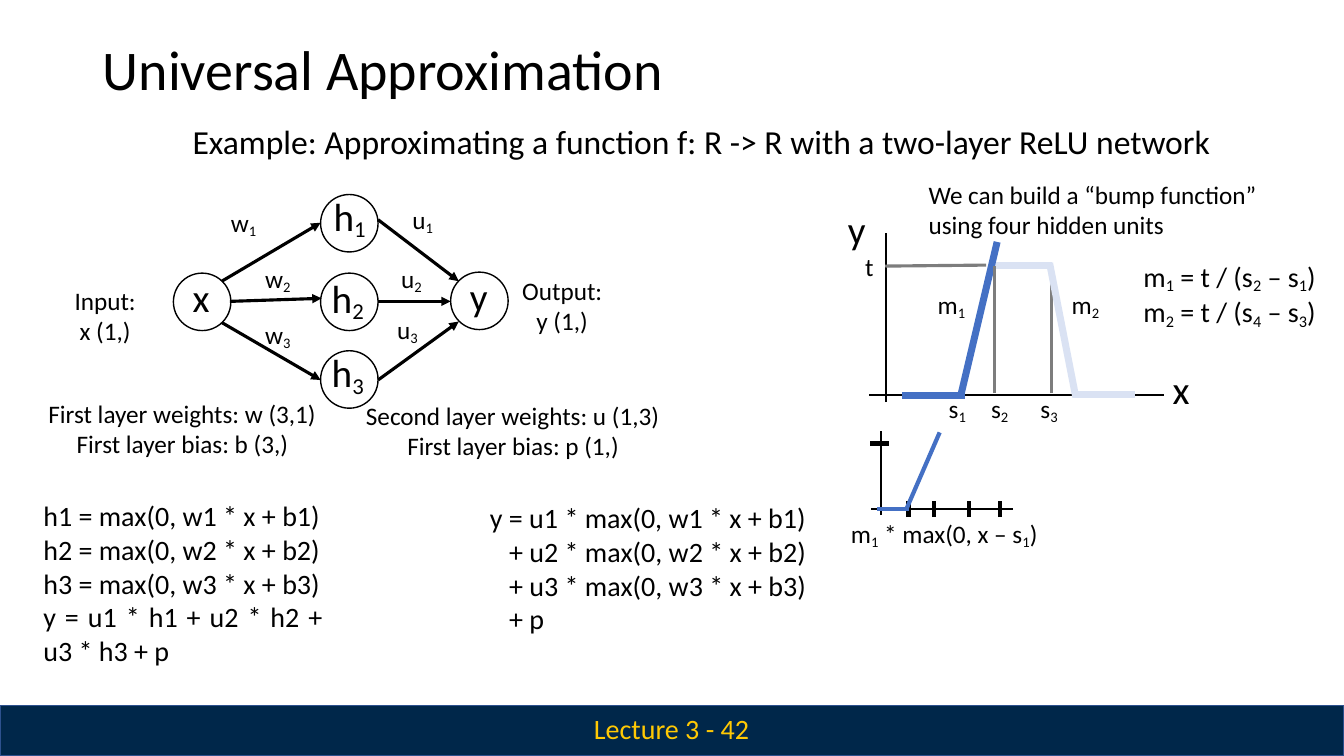
from dataclasses import dataclass

from lxml import etree
from pptx import Presentation
from pptx.dml.color import RGBColor
from pptx.enum import shapes, text
from pptx.oxml.ns import qn
from pptx.util import Inches, Pt

BLACK = RGBColor(0x00, 0x00, 0x00)
GREY = RGBColor(0x7D, 0x7D, 0x7D)
BLUE = RGBColor(0x44, 0x70, 0xC4)
PALE_BLUE = RGBColor(0xDA, 0xE2, 0xF3)
NAVY = RGBColor(0x00, 0x27, 0x4A)
NAVY_EDGE = RGBColor(0x2D, 0x51, 0x8E)
GOLD = RGBColor(0xFF, 0xC9, 0x04)

FONT = "Calibri"
NODE_SIZE = 0.57


@dataclass
class Region:
    """Part of the page; all positions are inches from its left top corner."""
    page: object
    left: float
    top: float

    def spot(self, across, down):
        return Inches(self.left + across), Inches(self.top + down)

    def label(self, across, down, width, lines, size=18, color=BLACK,
              hang=0, pitch=None, align=text.PP_ALIGN.LEFT):
        """Text box; "_" lowers the next character, hang indents later lines."""
        height = Inches(len(lines) * size * 1.22 / 72)
        box = self.page.shapes.add_textbox(*self.spot(across, down), Inches(width), height)
        frame = box.text_frame
        frame.word_wrap = True
        frame.margin_left = frame.margin_right = frame.margin_bottom = 0
        frame.margin_top = Inches(0.01)
        for index, line in enumerate(lines):
            para = frame.paragraphs[0] if index == 0 else frame.add_paragraph()
            para.alignment = align
            if pitch:
                para.line_spacing = Pt(pitch)
            if index == 0:
                para.space_before = Pt(1)
            elif hang:
                para._p.get_or_add_pPr().set("marL", str(Inches(hang)))
            plain, *lowered = line.split("_")
            add_span(para, plain, size, color)
            for piece in lowered:
                add_span(para, piece[0], size, color, "-16000")
                add_span(para, piece[1:], size, color)

    def line(self, start, end, color=BLACK, width=1.25, arrow=False):
        link = self.page.shapes.add_connector(
            shapes.MSO_CONNECTOR.STRAIGHT, *self.spot(*start), *self.spot(*end))
        link.line.color.rgb = color
        link.line.width = Pt(width)
        if arrow:
            etree.SubElement(link.line._get_or_add_ln(), qn("a:tailEnd"), type="triangle")
        etree.SubElement(link._element.spPr, qn("a:effectLst"))

    def node(self, across, down):
        circle = self.page.shapes.add_shape(
            shapes.MSO_SHAPE.OVAL, *self.spot(across, down),
            Inches(NODE_SIZE), Inches(NODE_SIZE))
        circle.shadow.inherit = False
        circle.fill.background()
        circle.line.color.rgb = BLACK
        circle.line.width = Pt(1)


def add_span(para, words, size, color, baseline=None):
    if not words:
        return
    span = para.add_run()
    span.text = words
    span.font.name = FONT
    span.font.size = Pt(size)
    span.font.color.rgb = color
    if baseline:
        span._r.get_or_add_rPr().set("baseline", baseline)


def add_footer(region):
    bar = region.page.shapes.add_shape(
        shapes.MSO_SHAPE.RECTANGLE, *region.spot(0, 0), Inches(13.33), Inches(0.5))
    bar.shadow.inherit = False
    bar.fill.solid()
    bar.fill.fore_color.rgb = NAVY
    bar.line.color.rgb = NAVY_EDGE
    bar.line.width = Pt(1)
    region.label(5.89, 0.05, 1.8, ["Lecture 3 - 42"], 20, GOLD)


def add_headings(region):
    region.label(0, 0, 11.8, ["Universal Approximation"], 40)
    region.label(0.89, 0.86, 10.5, [
        "Example: Approximating a function f: R -> R with a two-layer ReLU network"], 24)


def add_network(region):
    nodes = [("x", 0, 0.78, 0.19, -0.01), ("h_1", 1.46, 0, 0.13, -0.03),
             ("h_2", 1.46, 0.78, 0.11, 0), ("h_3", 1.46, 1.55, 0.11, -0.03),
             ("y", 2.75, 0.77, 0.19, -0.01)]
    for name, across, down, shift_across, shift_down in nodes:
        region.node(across, down)
        region.label(across + shift_across, down + shift_down, 0.5, [name], 28)

    arrows = [((0.48, 0.86), (1.46, 0.28)), ((0.56, 1.06), (1.47, 1.03)),
              ((0.48, 1.27), (1.46, 1.84)), ((2.03, 0.25), (2.83, 0.86)),
              ((2.03, 1.06), (2.75, 1.06)), ((2.03, 1.84), (2.83, 1.26))]
    for start, end in arrows:
        region.line(start, end, width=2.25, arrow=True)

    weights = [("w_1", 0.57, 0.12), ("w_2", 0.91, 0.67), ("w_3", 0.91, 1.23),
               ("u_1", 2.37, 0.09), ("u_2", 2.26, 0.67), ("u_3", 2.22, 1.18)]
    for name, across, down in weights:
        region.label(across, down, 0.4, [name])

    captions = [(-0.98, 0.9, 0.05, ["Input:", "x (1,)"]),
                (3.46, 0.8, 0.14, ["Output:", "y (1,)"]),
                (-1.24, 2.02, 0.28, ["First layer weights: w (3,1)", "First layer bias: b (3,)"]),
                (1.91, 2.04, 0.41, ["Second layer weights: u (1,3)", "First layer bias: p (1,)"])]
    for across, down, hang, lines in captions:
        region.label(across, down, 3.1, lines, hang=hang, pitch=21.1)


def add_equations(region):
    region.label(0, 0, 2.77, [
        "h1 = max(0, w1 * x + b1)",
        "h2 = max(0, w2 * x + b2)",
        "h3 = max(0, w3 * x + b3)",
        "y = u1 * h1 + u2 * h2 + u3 * h3 + p"], 20, align=text.PP_ALIGN.JUSTIFY)
    region.label(4.43, 0.02, 3.4, [
        "y = u1 * max(0, w1 * x + b1)",
        "+ u2 * max(0, w2 * x + b2)",
        "+ u3 * max(0, w3 * x + b3)",
        "+ p"], 20, hang=0.19)


def add_bump_plot(region):
    """Bump function; the region starts where the two axes cross."""
    top = -1.29
    region.line((1.64, -0.02), (1.64, top), GREY, 2.25)
    region.line((1.02, top), (1.64, top), PALE_BLUE, 5)
    region.line((-0.17, 0), (2.76, 0))
    region.line((0, 0.07), (0, -1.61))
    region.line((0.16, 0), (0.78, 0), BLUE, 5)
    region.line((0.74, 0), (1.1, -1.52), BLUE, 5)
    region.line((-0.01, -1.28), (0.99, top), GREY, 2.25)
    region.line((1.07, -0.02), (1.07, -1.28), GREY, 2.25)
    region.line((1.88, 0.02), (1.62, -1.31), PALE_BLUE, 5)
    region.line((1.85, -0.01), (2.47, -0.01), PALE_BLUE, 5)

    region.label(2.84, -0.31, 0.3, ["x"], 28)
    region.label(-0.38, -1.89, 0.3, ["y"], 28)
    marks = [("t", -0.21, -1.44), ("m_1", 0.51, -1.06), ("m_2", 1.84, -1.06),
             ("s_1", 0.62, -0.03), ("s_2", 1.04, -0.03), ("s_3", 1.53, -0.03)]
    for name, across, down in marks:
        region.label(across, down, 0.4, [name])

    region.label(0.42, -2.14, 3.5, [
        "We can build a “bump function”", "using four hidden units"], pitch=21.1)
    region.label(2.55, -1.36, 1.9, [
        "m_1 = t / (s_2 – s_1)", "m_2 = t / (s_4 – s_3)"], 20)


def add_unit_plot(region):
    """One hidden unit; the region starts where the two axes cross."""
    region.line((0, 0.06), (0, -0.77))
    region.line((-0.1, 0), (1.31, 0))
    for tick in (0.27, 0.52, 0.87, 1.18):
        region.line((tick, 0.08), (tick, -0.08), width=3)
    region.line((-0.04, 0), (0.28, 0), BLUE, 3)
    region.line((-0.11, -0.65), (0.08, -0.65), width=3)
    region.line((0.25, 0), (0.58, -0.76), BLUE, 3)
    region.label(-0.3, 0.08, 2.1, ["m_1 * max(0, x – s_1)"])


def main():
    deck = Presentation()
    deck.slide_width = Inches(13.33)
    deck.slide_height = Inches(7.5)
    page = deck.slides.add_slide(deck.slide_layouts[6])
    add_footer(Region(page, 0, 7))
    add_headings(Region(page, 1.02, 0.33))
    add_network(Region(page, 1.72, 1.93))
    add_equations(Region(page, 0.43, 4.94))
    add_bump_plot(Region(page, 8.79, 3.92))
    add_unit_plot(Region(page, 8.74, 5.05))
    deck.save("out.pptx")


if __name__ == "__main__":
    main()
